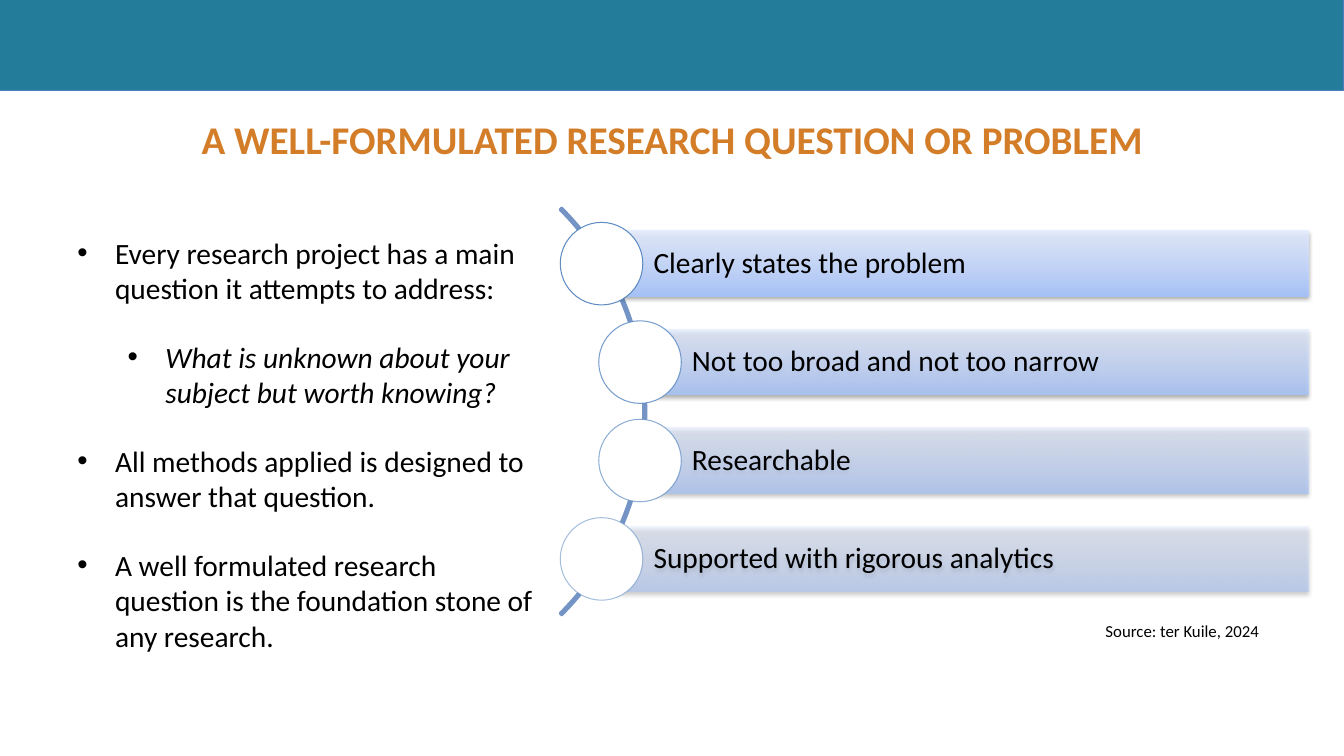
"""Builds the slide on a well-formulated research question."""
from dataclasses import dataclass

from lxml.etree import SubElement
from pptx import Presentation
from pptx.dml.color import RGBColor
from pptx.enum.shapes import MSO_SHAPE
from pptx.enum.text import MSO_ANCHOR, PP_ALIGN
from pptx.oxml import parse_xml
from pptx.oxml.ns import nsdecls, qn
from pptx.util import Cm, Pt


@dataclass(frozen=True)
class Theme:
    """Colours, font and type sizes of the slide."""
    font: str = "Calibri"
    teal: str = "237C9A"
    edge: str = "4B7EBC"
    orange: str = "D37D28"
    black: str = "000000"
    white: str = "FFFFFF"
    arc: str = "7394C5"
    ring: str = "4F81BD"
    bar_stops: tuple = ((0, "A4C4FF"), (35, "BFD4FF"), (100, "E6EEFF"))
    title: float = 28
    body: float = 21
    source: float = 12


@dataclass(frozen=True)
class Bullet:
    """One bullet paragraph with its left indent in centimetres."""
    text: str
    indent: float = 0.95
    italic: bool = False


@dataclass(frozen=True)
class Quality:
    """One bar of the curved list with its left edge in centimetres."""
    text: str
    left: float


T = Theme()
W, H = 33.87, 19.05
HANGING = 0.95
BAR_RIGHT, BAR_TOP, BAR_H, BAR_PITCH = 32.98, 5.82, 1.65, 2.48
RING_D = 2.08

BULLETS = [
    Bullet("Every research project has a main question it attempts to address:"),
    Bullet("What is unknown about your subject but worth knowing?", 2.22, True),
    Bullet("All methods applied is designed to answer that question."),
    Bullet("A well formulated research question is the foundation stone of any research."),
]
QUALITIES = [
    Quality("Clearly states the problem", 15.16),
    Quality("Not too broad and not too narrow", 16.13),
    Quality("Researchable", 16.13),
    Quality("Supported with rigorous analytics", 15.16),
]


def style(p, size: float, color: str = T.black, bold: bool = False, italic: bool = False) -> None:
    """Formats every run of a paragraph."""
    for r in p.runs:
        r.font.name, r.font.size = T.font, Pt(size)
        r.font.bold, r.font.italic = bold, italic
        r.font.color.rgb = RGBColor.from_string(color)


def add_text(s, box: tuple, text: str):
    """Adds a wrapping text box and returns its text frame."""
    tf = s.shapes.add_textbox(*map(Cm, box)).text_frame
    tf.word_wrap = True
    tf.text = text
    return tf


def add_shape(s, kind, box: tuple, fill: str = "", line: str = "", width: float = 0.75):
    """Adds a shadowless preset shape with optional fill and line."""
    sp = s.shapes.add_shape(kind, *map(Cm, box))
    sp.shadow.inherit = False
    if fill:
        sp.fill.solid()
        sp.fill.fore_color.rgb = RGBColor.from_string(fill)
    else:
        sp.fill.background()
    if line:
        sp.line.color.rgb = RGBColor.from_string(line)
        sp.line.width = Pt(width)
    else:
        sp.line.fill.background()
    return sp


def add_bullets(s, box: tuple, bullets: list[Bullet]) -> None:
    """Adds the bullet list."""
    tf = add_text(s, box, "\n".join(b.text for b in bullets))
    for i, (p, b) in enumerate(zip(tf.paragraphs, bullets)):
        pPr = p._p.get_or_add_pPr()
        pPr.set("marL", str(Cm(b.indent)))
        pPr.set("indent", str(-Cm(HANGING)))
        SubElement(pPr, qn("a:buFont"), typeface="Arial")
        SubElement(pPr, qn("a:buChar"), char="•")
        p.space_before, p.space_after = Pt(12 if i else 0), Pt(12)
        style(p, T.body, italic=b.italic)


def add_quality(s, q: Quality, top: float, alpha: int) -> None:
    """Adds a translucent gradient bar and the ring on its left edge."""
    sp = add_shape(s, MSO_SHAPE.RECTANGLE, (q.left, top, BAR_RIGHT - q.left, BAR_H))
    stops = "".join(
        f'<a:gs pos="{pos * 1000}"><a:srgbClr val="{c}"><a:alpha val="{alpha}"/></a:srgbClr></a:gs>'
        for pos, c in T.bar_stops)
    spPr = sp._element.spPr
    spPr.replace(spPr.find(qn("a:noFill")), parse_xml(
        f'<a:gradFill {nsdecls("a")} rotWithShape="1"><a:gsLst>{stops}</a:gsLst>'
        '<a:lin ang="16200000" scaled="0"/></a:gradFill>'))
    spPr.find(qn("a:effectLst")).append(parse_xml(
        f'<a:outerShdw {nsdecls("a")} blurRad="{Pt(3.1)}" dist="{Pt(1.6)}" dir="5400000" '
        f'rotWithShape="0"><a:srgbClr val="{T.black}"><a:alpha val="38000"/></a:srgbClr></a:outerShdw>'))

    tf = sp.text_frame
    tf.word_wrap, tf.vertical_anchor = True, MSO_ANCHOR.MIDDLE
    tf.margin_left = Cm(1.31)
    tf.margin_right = tf.margin_top = tf.margin_bottom = Cm(0.14)
    tf.text = q.text
    p = tf.paragraphs[0]
    p.alignment, p.line_spacing = PP_ALIGN.LEFT, 0.9
    style(p, T.body)

    ring_box = (q.left - RING_D / 2, top + (BAR_H - RING_D) / 2, RING_D, RING_D)
    ring = add_shape(s, MSO_SHAPE.OVAL, ring_box, T.white, T.ring)
    color = ring._element.spPr.find(qn("a:ln")).find(".//" + qn("a:srgbClr"))
    SubElement(color, qn("a:alpha"), val=str(alpha))


def main() -> None:
    """Builds and saves the slide."""
    prs = Presentation()
    prs.slide_width, prs.slide_height = Cm(W), Cm(H)
    s = prs.slides.add_slide(prs.slide_layouts[6])

    add_shape(s, MSO_SHAPE.RECTANGLE, (0, 0, W, 2.29), T.teal, T.edge)

    tf = add_text(s, (0, 2.77, W, 1.65), "A WELL-FORMULATED RESEARCH QUESTION OR PROBLEM")
    tf.margin_bottom = 0
    tf.paragraphs[0].alignment = PP_ALIGN.CENTER
    style(tf.paragraphs[0], T.title, T.orange, bold=True)

    add_bullets(s, (1.7, 5.79, 12.24, 10.77), BULLETS)

    arc = add_shape(s, MSO_SHAPE.BLOCK_ARC, (1.78, 3.12, 14.5, 14.5), line=T.arc, width=2)
    for i, value in enumerate((189, 27, 0.004)):
        arc.adjustments[i] = value

    for i, q in enumerate(QUALITIES):
        alpha = 90000 - 40000 * i // (len(QUALITIES) - 1)
        add_quality(s, q, BAR_TOP + i * BAR_PITCH, alpha)

    tf = add_text(s, (27.61, 15.52, 5.97, 0.76), "Source: ter Kuile, 2024")
    style(tf.paragraphs[0], T.source)

    prs.save("out.pptx")


if __name__ == "__main__":
    main()
